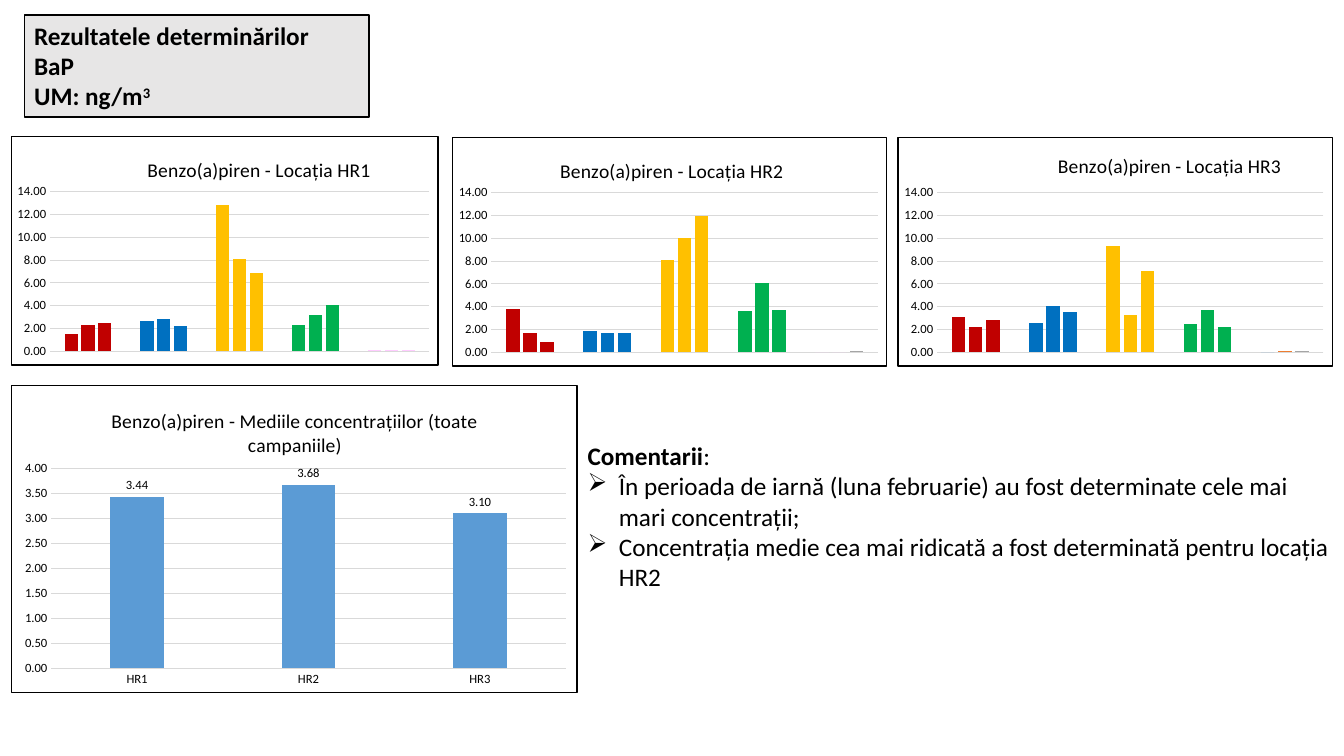
from dataclasses import dataclass

from lxml import etree
from pptx import Presentation
from pptx.chart.axis import ValueAxis
from pptx.chart.chart import Chart
from pptx.chart.data import CategoryChartData
from pptx.dml.color import RGBColor
from pptx.enum.chart import XL_CHART_TYPE, XL_LABEL_POSITION, XL_TICK_MARK
from pptx.enum.shapes import MSO_SHAPE
from pptx.enum.text import MSO_ANCHOR, PP_ALIGN
from pptx.oxml import parse_xml
from pptx.oxml.ns import nsdecls, qn
from pptx.slide import Slide
from pptx.text.text import Font, TextFrame, _Paragraph
from pptx.util import Pt

EMU_PER_PX = 9144
FONT = "Calibri"
NUMBER_FORMAT = "0.00"
CLUSTERED = XL_CHART_TYPE.COLUMN_CLUSTERED
OUTSIDE_END = XL_LABEL_POSITION.OUTSIDE_END
NO_TICK = XL_TICK_MARK.NONE
RECTANGLE = MSO_SHAPE.RECTANGLE
LEFT = PP_ALIGN.LEFT
TOP = MSO_ANCHOR.TOP

BLACK = RGBColor(0x00, 0x00, 0x00)
WHITE = RGBColor(0xFF, 0xFF, 0xFF)
PANEL = RGBColor(0xE7, 0xE6, 0xE6)
GRID = RGBColor(0xD9, 0xD9, 0xD9)
RED = RGBColor(0xC0, 0x00, 0x00)
BLUE = RGBColor(0x00, 0x70, 0xC0)
YELLOW = RGBColor(0xFF, 0xC0, 0x00)
GREEN = RGBColor(0x00, 0xB0, 0x50)
PINK = RGBColor(0xFF, 0xCC, 0xFF)
SERIES_COLORS = (
    RGBColor(0x5B, 0x9B, 0xD5),
    RGBColor(0xED, 0x7D, 0x31),
    RGBColor(0xA5, 0xA5, 0xA5),
)
CAMPAIGNS = ("1", "2", "3", "4", "5")
LOCATIONS = ("HR1", "HR2", "HR3")
CAMPAIGN_COLORS = (RED, BLUE, YELLOW, GREEN, PINK)


@dataclass(frozen=True)
class Span:
    text: str
    bold: bool = False
    superscript: bool = False


@dataclass(frozen=True)
class Para:
    spans: tuple[Span, ...]
    bullet: bool = False


@dataclass(frozen=True)
class ColumnChart:
    title: str
    box: tuple[int, int, int, int]
    title_at: tuple[float, float]
    plot_at: tuple[float, float, float, float]
    categories: tuple[str, ...]
    series: tuple[tuple[float, ...], ...]
    maximum: float
    unit: float
    colored_points: tuple[int, ...] = (0,)
    detailed: bool = False


SMALL_PLOT = (0.09, 0.24, 0.89, 0.7)
CHARTS = (
    ColumnChart(
        "Benzo(a)piren - Locația HR1", (11, 135, 424, 228), (0.31, 0.07),
        SMALL_PLOT, CAMPAIGNS,
        ((1.5, 2.7, 12.8, 2.3, 0.1), (2.3, 2.8, 8.1, 3.2, 0.1), (2.5, 2.2, 6.9, 4.1, 0.1)),
        14, 2, (5, 5, 5),
    ),
    ColumnChart(
        "Benzo(a)piren - Locația HR2", (448, 136, 432, 228), (0.24, 0.07),
        SMALL_PLOT, CAMPAIGNS,
        ((3.8, 1.9, 8.1, 3.6, 0), (1.7, 1.7, 10, 6.1, 0), (0.9, 1.7, 11.9, 3.7, 0.1)),
        14, 2, (5, 5, 4),
    ),
    ColumnChart(
        "Benzo(a)piren - Locația HR3", (890, 136, 432, 228), (0.36, 0.05),
        SMALL_PLOT, CAMPAIGNS,
        ((3.1, 2.6, 9.3, 2.5, 0), (2.2, 4.1, 3.3, 3.7, 0.1), (2.8, 3.5, 7.1, 2.2, 0.1)),
        14, 2, (4, 4, 4),
    ),
    ColumnChart(
        "Benzo(a)piren - Mediile concentrațiilor (toate campaniile)",
        (11, 382, 562, 306), (0.17, 0.06), (0.07, 0.27, 0.91, 0.65), LOCATIONS,
        ((3.44, 3.68, 3.1),), 4, 0.5, detailed=True,
    ),
)
HEADING = (
    Para((Span("Rezultatele determinărilor", True),)),
    Para((Span("BaP", True),)),
    Para((Span("UM: ng/m", True), Span("3", True, True))),
)
COMMENTS = (
    Para((Span("Comentarii", True), Span(":"))),
    Para((Span("În perioada de iarnă (luna februarie) au fost determinate cele mai mari "
               "concentrații;"),), True),
    Para((Span("Concentrația medie cea mai ridicată a fost determinată pentru locația HR2"),), True),
)


def px(length: int) -> int:
    """Convert px to EMU."""
    return length * EMU_PER_PX


def style_font(font: Font, size: int, bold: bool = False) -> None:
    """Apply the common typeface in black."""
    font.name = FONT
    font.size = Pt(size)
    font.bold = bold
    font.color.rgb = BLACK


def add_bullet(para: _Paragraph) -> None:
    """Give a paragraph an arrow bullet with a hanging indent."""
    properties = para._p.get_or_add_pPr()
    properties.set("marL", str(px(31)))
    properties.set("indent", str(-px(31)))
    etree.SubElement(properties, qn("a:buChar")).set("char", "➢")


def write_text(frame: TextFrame, content: tuple[Para, ...]) -> None:
    """Write paragraphs run by run."""
    frame.word_wrap = True
    frame.vertical_anchor = TOP
    for index, item in enumerate(content):
        para = frame.add_paragraph() if index else frame.paragraphs[0]
        para.alignment = LEFT
        if item.bullet:
            add_bullet(para)
        for span in item.spans:
            run = para.add_run()
            run.text = span.text
            style_font(run.font, 18, span.bold)
            if span.superscript:
                run._r.get_or_add_rPr().set("baseline", "30000")


def place(parent: etree._Element, index: int, values: tuple[float, ...], inner: bool = False) -> None:
    """Set a manual layout as fractions of the chart."""
    for old in parent.findall(qn("c:layout")):
        parent.remove(old)
    layout = parse_xml(f"<c:layout {nsdecls('c')}><c:manualLayout/></c:layout>")
    settings = [("layoutTarget", "inner")] if inner else []
    settings += [("xMode", "edge"), ("yMode", "edge")]
    settings += list(zip("xywh", values))
    for name, value in settings:
        etree.SubElement(layout[0], qn(f"c:{name}")).set("val", str(value))
    parent.insert(index, layout)


def frame_chart(chart: Chart) -> None:
    """Give the chart area a white fill and a black border."""
    area = parse_xml(
        f"<c:spPr {nsdecls('c', 'a')}><a:solidFill><a:srgbClr val='{WHITE}'/></a:solidFill>"
        f"<a:ln w='{Pt(1)}'><a:solidFill><a:srgbClr val='{BLACK}'/></a:solidFill></a:ln></c:spPr>"
    )
    chart._chartSpace.find(qn("c:chart")).addnext(area)


def style_value_axis(axis: ValueAxis, maximum: float, unit: float) -> None:
    """Set the value scale, its labels and gridlines."""
    axis.minimum_scale = 0
    axis.maximum_scale = maximum
    axis.major_unit = unit
    axis.major_tick_mark = NO_TICK
    axis.format.line.fill.background()
    grid_line = axis.major_gridlines.format.line
    grid_line.color.rgb = GRID
    grid_line.width = Pt(0.75)
    axis.tick_labels.number_format = NUMBER_FORMAT
    axis.tick_labels.number_format_is_linked = False
    style_font(axis.tick_labels.font, 9)


def add_column_chart(page: Slide, item: ColumnChart) -> None:
    """Draw one column chart."""
    data = CategoryChartData(NUMBER_FORMAT)
    data.categories = item.categories
    for number, values in enumerate(item.series, 1):
        data.add_series(f"Series {number}", values)
    chart = page.shapes.add_chart(CLUSTERED, *map(px, item.box), data).chart
    style_font(chart.font, 10)
    frame_chart(chart)
    chart.has_legend = False
    title = chart.chart_title
    run = title.text_frame.paragraphs[0].add_run()
    run.text = item.title
    style_font(run.font, 14)
    place(title._element, 1, item.title_at)
    place(chart._chartSpace.chart.plotArea, 0, item.plot_at, True)
    style_value_axis(chart.value_axis, item.maximum, item.unit)
    plot = chart.plots[0]
    plot.gap_width = 219
    plot.overlap = -27
    plot.vary_by_categories = False
    for series, color, count in zip(plot.series, SERIES_COLORS, item.colored_points):
        series.format.fill.solid()
        series.format.fill.fore_color.rgb = color
        series.invert_if_negative = False
        for index, point_color in enumerate(CAMPAIGN_COLORS[:count]):
            fill = series.points[index].format.fill
            fill.solid()
            fill.fore_color.rgb = point_color
    axis = chart.category_axis
    axis.visible = item.detailed
    if item.detailed:
        axis.major_tick_mark = NO_TICK
        axis.format.line.color.rgb = GRID
        axis.format.line.width = Pt(0.75)
        style_font(axis.tick_labels.font, 9)
        plot.has_data_labels = True
        labels = plot.data_labels
        labels.show_value = True
        labels.position = OUTSIDE_END
        labels.number_format = NUMBER_FORMAT
        labels.number_format_is_linked = False
        style_font(labels.font, 9)


def main() -> None:
    """Build and save the deck."""
    deck = Presentation()
    deck.slide_width, deck.slide_height = px(1333), px(750)
    page = deck.slides.add_slide(deck.slide_layouts[6])
    heading = page.shapes.add_shape(RECTANGLE, px(24), px(15), px(342), px(101))
    heading.shadow.inherit = False
    heading.fill.solid()
    heading.fill.fore_color.rgb = PANEL
    heading.line.color.rgb = BLACK
    heading.line.width = Pt(1)
    write_text(heading.text_frame, HEADING)
    comments = page.shapes.add_textbox(px(573), px(432), px(760), px(162))
    write_text(comments.text_frame, COMMENTS)
    for item in CHARTS:
        add_column_chart(page, item)
    deck.save("out.pptx")


if __name__ == "__main__":
    main()
